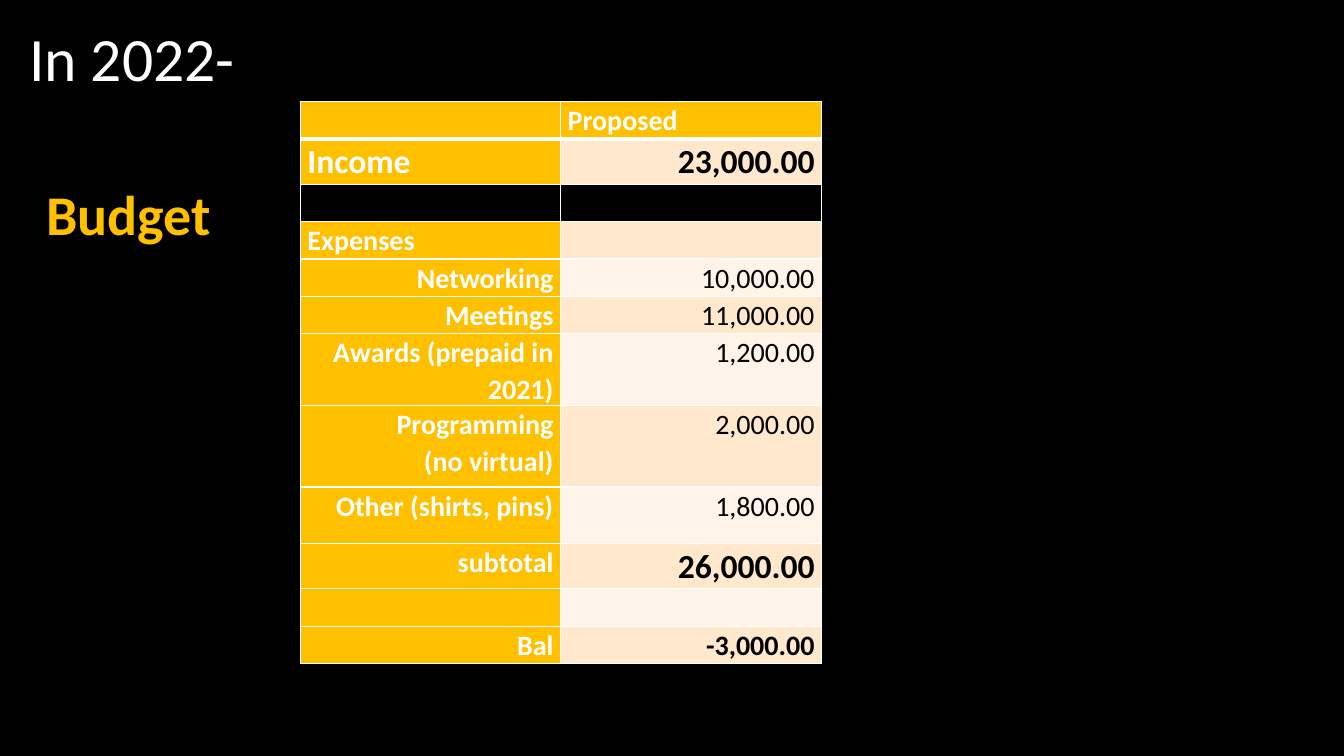
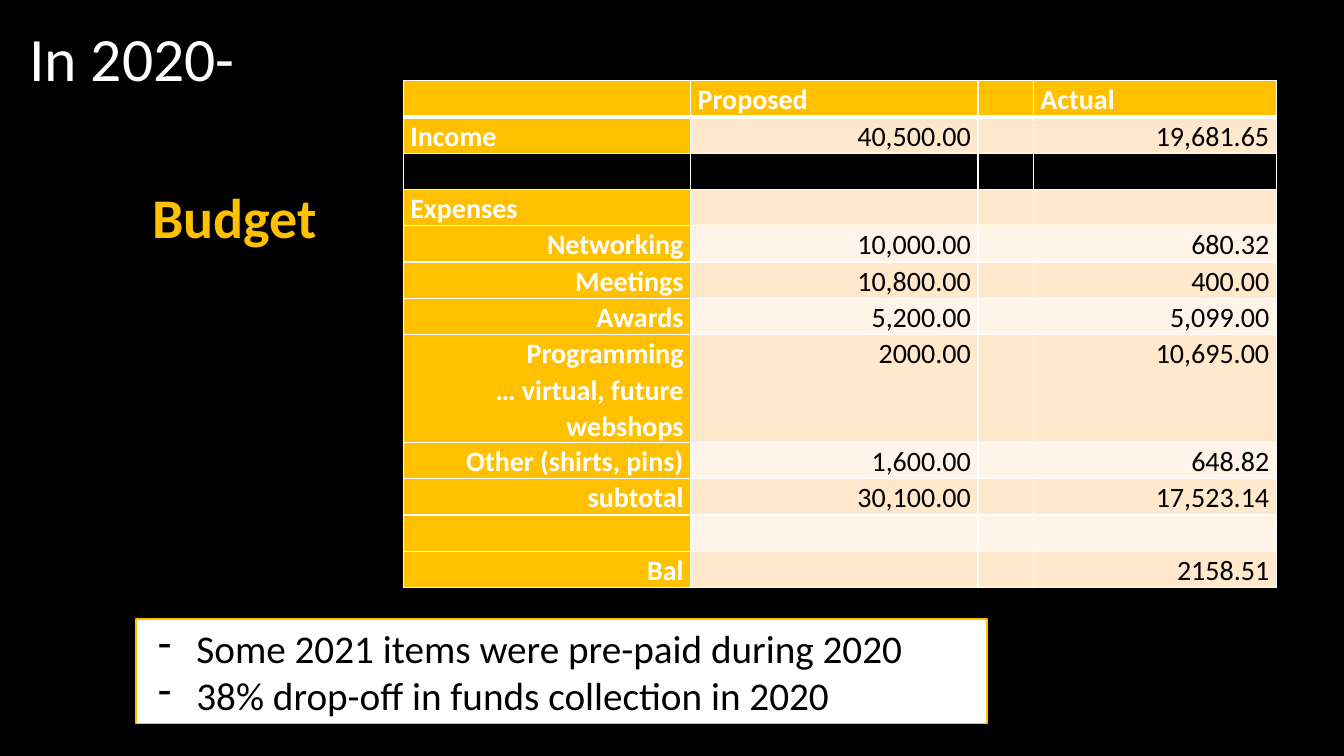
import lxml.etree
import pptx
import pptx.dml.color
import pptx.enum.shapes
import pptx.enum.text
import pptx.oxml.ns
import pptx.util

Inches = pptx.util.Inches
Pt = pptx.util.Pt
RGBColor = pptx.dml.color.RGBColor
Align = pptx.enum.text.PP_ALIGN
Anchor = pptx.enum.text.MSO_ANCHOR
qn = pptx.oxml.ns.qn

BLACK = RGBColor(0x00, 0x00, 0x00)
WHITE = RGBColor(0xFF, 0xFF, 0xFF)
GOLD = RGBColor(0xFF, 0xC0, 0x00)
PEACH = RGBColor(0xFF, 0xE8, 0xCC)
CREAM = RGBColor(0xFF, 0xF4, 0xE7)
FONT = "Calibri"
HEADER_ROW, INCOME_ROW, GAP_ROW, SUBTOTAL_ROW, BALANCE_ROW = 0, 1, 2, 9, 11
LEFT_LABELS = ("Income", "Expenses")

BUDGET_2022 = [
    ("", "Proposed"),
    ("Income", "23,000.00"),
    ("", ""),
    ("Expenses", ""),
    ("Networking", "10,000.00"),
    ("Meetings", "11,000.00"),
    ("Awards (prepaid in 2021)", "1,200.00"),
    ("Programming\n(no virtual)", "2,000.00"),
    ("Other (shirts, pins)", "1,800.00"),
    ("subtotal", "26,000.00"),
    ("", ""),
    ("Bal", "-3,000.00"),
]
HEIGHTS_2022 = [0.37, 0.45] + [0.37] * 4 + [0.71, 0.81, 0.56, 0.45, 0.37, 0.37]
EMPHASIS_2022 = {
    (INCOME_ROW, 0): 24,
    (INCOME_ROW, 1): 24,
    (SUBTOTAL_ROW, 1): 24,
    (BALANCE_ROW, 1): 20,
}

BUDGET_2020 = [
    ("", "Proposed", "", "Actual"),
    ("Income", "40,500.00", "", "19,681.65"),
    ("", "", "", ""),
    ("Expenses", "", "", ""),
    ("Networking", "10,000.00", "", "680.32"),
    ("Meetings", "10,800.00", "", "400.00"),
    ("Awards", "5,200.00", "", "5,099.00"),
    ("Programming\n… virtual, future webshops", "2000.00", "", "10,695.00"),
    ("Other (shirts, pins)", "1,600.00", "", "648.82"),
    ("subtotal", "30,100.00", "", "17,523.14"),
    ("", "", "", ""),
    ("Bal", "", "", "2158.51"),
]
HEIGHTS_2020 = [0.36] * 7 + [1.07] + [0.36] * 4
NOTES_2020 = [
    "Some 2021 items were pre-paid during 2020",
    "38% drop-off in funds collection in 2020",
]


def style_paragraph(para, size, color, bold=False, align=Align.LEFT, spacing=1.0):
    """Set the font, alignment and line spacing of one paragraph."""
    para.alignment = align
    para.line_spacing = spacing
    para.font.name = FONT
    para.font.size = Pt(size)
    para.font.bold = bold
    para.font.color.rgb = color


def add_titled_slide(deck, title):
    """Add a title-only slide with its large white title."""
    page = deck.slides.add_slide(deck.slide_layouts[5])
    holder = page.shapes.title
    holder.left, holder.top = Inches(0.19), Inches(-0.11)
    holder.width, holder.height = Inches(11.5), Inches(1.45)
    holder.text_frame.text = title
    holder.text_frame.vertical_anchor = Anchor.MIDDLE
    style_paragraph(holder.text_frame.paragraphs[0], 44, WHITE, spacing=0.9)
    return page


def add_budget_label(page, left, top, width):
    """Write the gold Budget heading beside the table."""
    box = page.shapes.add_textbox(Inches(left), Inches(top), Inches(width), Inches(0.77))
    box.text_frame.word_wrap = True
    box.text_frame.text = "Budget"
    style_paragraph(box.text_frame.paragraphs[0], 40, GOLD, bold=True)


def set_borders(cell, row):
    """Draw white cell edges, with a heavy rule under the header."""
    properties = cell._tc.get_or_add_tcPr()
    heavy = {"lnB": HEADER_ROW, "lnT": HEADER_ROW + 1}
    for side in ("lnL", "lnR", "lnT", "lnB"):
        weight = 3 if heavy.get(side) == row else 1
        edge = lxml.etree.SubElement(properties, qn("a:" + side), w=str(Pt(weight)))
        fill = lxml.etree.SubElement(edge, qn("a:solidFill"))
        lxml.etree.SubElement(fill, qn("a:srgbClr"), val=str(WHITE))


def cell_fill(row, column):
    """Choose a cell's fill from its place in the table."""
    if row == GAP_ROW:
        return BLACK
    if row == HEADER_ROW or column == 0:
        return GOLD
    return PEACH if row % 2 else CREAM


def fill_cell(cell, text, row, column, emphasis):
    """Write and format one budget cell."""
    heading = row == HEADER_ROW or column == 0
    left_aligned = row == HEADER_ROW or text in LEFT_LABELS
    cell.margin_left = cell.margin_right = Inches(0.07)
    cell.margin_top = cell.margin_bottom = 0
    set_borders(cell, row)
    cell.fill.solid()
    cell.fill.fore_color.rgb = cell_fill(row, column)
    cell.text_frame.text = text
    for para in cell.text_frame.paragraphs:
        style_paragraph(
            para,
            emphasis.get((row, column), 20),
            WHITE if heading else BLACK,
            bold=heading or (row, column) in emphasis,
            align=Align.LEFT if left_aligned else Align.RIGHT,
            spacing=1.07,
        )


def add_budget_table(page, left, top, widths, heights, rows, emphasis):
    """Build a budget table at the given corner."""
    frame = page.shapes.add_table(
        len(rows), len(widths), Inches(left), Inches(top),
        Inches(sum(widths)), Inches(sum(heights)),
    )
    table = frame.table
    table.horz_banding = False
    for column, width in zip(table.columns, widths):
        column.width = Inches(width)
    for row, height in zip(table.rows, heights):
        row.height = Inches(height)
    for row, texts in enumerate(rows):
        for column, text in enumerate(texts):
            fill_cell(table.cell(row, column), text, row, column, emphasis)


def add_notes_box(page, left, top, width, height, notes):
    """Add a white box with a gold outline and dashed bullets."""
    box = page.shapes.add_shape(
        pptx.enum.shapes.MSO_SHAPE.RECTANGLE,
        Inches(left), Inches(top), Inches(width), Inches(height),
    )
    box.shadow.inherit = False
    box.fill.solid()
    box.fill.fore_color.rgb = WHITE
    box.line.color.rgb = GOLD
    box.line.width = Pt(1)
    box.text_frame.word_wrap = True
    box.text_frame.text = "\n".join(notes)
    for para in box.text_frame.paragraphs:
        properties = para._p.get_or_add_pPr()
        properties.set("marL", str(Inches(0.5)))
        properties.set("indent", str(Inches(-0.38)))
        lxml.etree.SubElement(properties, qn("a:buChar"), char="-")
        style_paragraph(para, 28, BLACK)


def build_2022_slide(deck):
    """Build the proposed 2022 budget slide."""
    page = add_titled_slide(deck, "In 2022-")
    add_budget_label(page, 0.36, 1.73, 2.5)
    add_budget_table(
        page, 2.98, 1.01, [2.58, 2.59], HEIGHTS_2022, BUDGET_2022, EMPHASIS_2022
    )


def build_2020_slide(deck):
    """Build the slide of 2020 proposed and actual figures."""
    page = add_titled_slide(deck, "In 2020-")
    add_notes_box(page, 1.35, 6.14, 8.44, 1.04, NOTES_2020)
    add_budget_label(page, 1.41, 1.76, 2.5)
    add_budget_table(
        page, 4, 0.8, [2.85, 2.85, 0.55, 2.41], HEIGHTS_2020, BUDGET_2020, {}
    )


def main():
    """Build and save the deck."""
    deck = pptx.Presentation()
    deck.slide_width, deck.slide_height = Inches(13.33), Inches(7.5)
    backdrop = deck.slide_master.background.fill
    backdrop.solid()
    backdrop.fore_color.rgb = BLACK
    build_2022_slide(deck)
    build_2020_slide(deck)
    deck.save("out.pptx")


if __name__ == "__main__":
    main()
